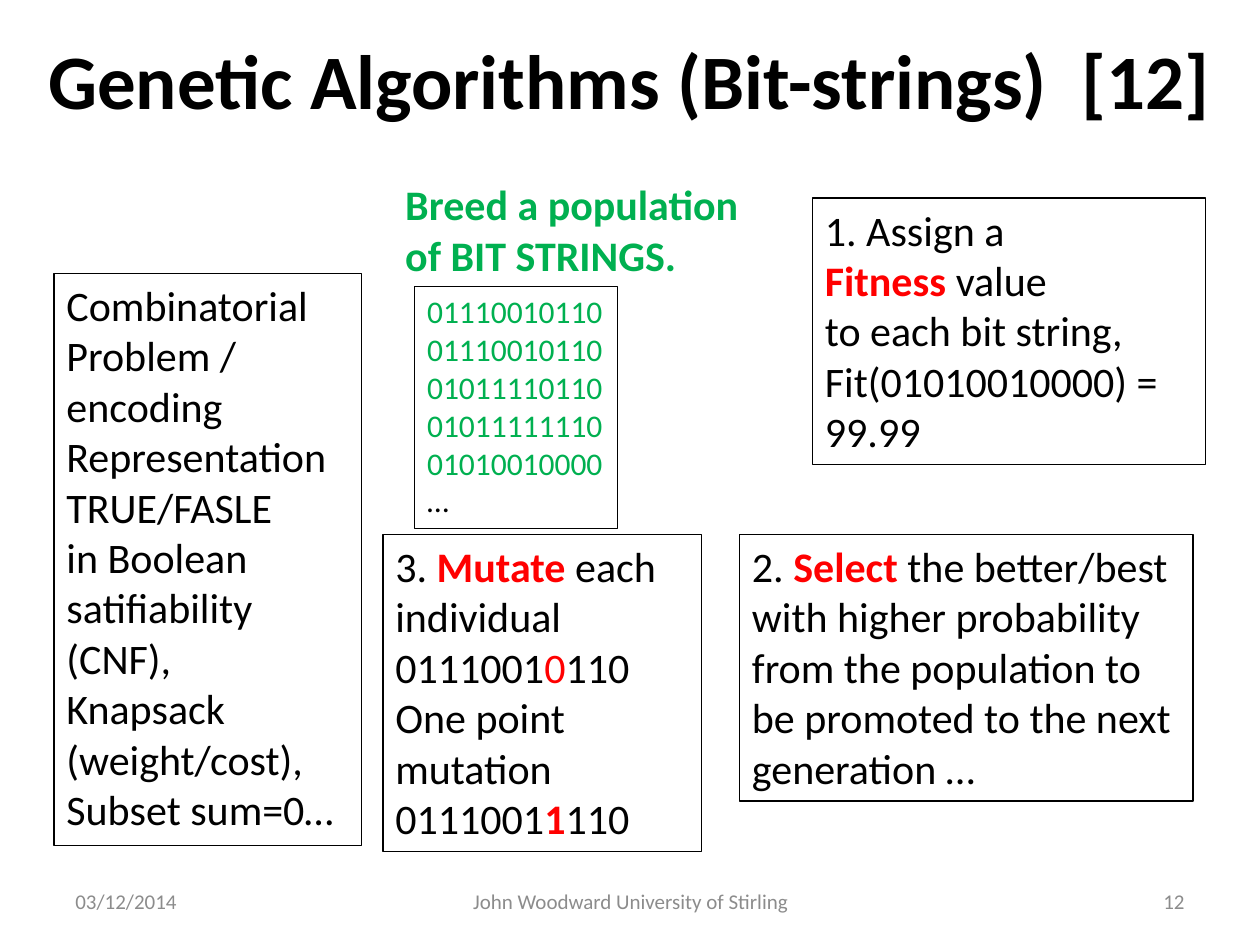
import pptx
import pptx.util
import pptx.dml.color
import pptx.enum.shapes
import pptx.enum.text

Cm, Pt = pptx.util.Cm, pptx.util.Pt
ALIGN = pptx.enum.text.PP_ALIGN
MID = pptx.enum.text.MSO_ANCHOR.MIDDLE
RECT = pptx.enum.shapes.MSO_SHAPE.RECTANGLE
HUE = {"black": "000000", "red": "FF0000", "green": "00B050", "grey": "8C8C8C"}


def rgb(name):
    return pptx.dml.color.RGBColor.from_string(HUE[name])


def fill_text(shape, paras, size, hue="black", bold=False, align=ALIGN.LEFT, wrap=True):
    """Write paragraphs; each is a string or a list of strings and (text, hue, bold) runs."""
    frame = shape.text_frame
    frame.word_wrap = wrap
    for i, para in enumerate(paras):
        line = frame.add_paragraph() if i else frame.paragraphs[0]
        line.alignment = align
        for part in [para] if isinstance(para, str) else para:
            text, tint, heavy = (part, hue, bold) if isinstance(part, str) else part
            run = line.add_run()
            run.text = text
            run.font.name = "Calibri"
            run.font.size = Pt(size)
            run.font.bold = heavy
            run.font.color.rgb = rgb(tint)


deck = pptx.Presentation()
deck.slide_width, deck.slide_height = Cm(25.4), Cm(19.05)
slide = deck.slides.add_slide(deck.slide_layouts[6])
shapes = slide.shapes

# Title and heading
title = shapes.add_textbox(Cm(0), Cm(0), Cm(25.4), Cm(3.18))
title.text_frame.vertical_anchor = MID
fill_text(title, ["Genetic Algorithms (Bit-strings)  [12]"], 44, bold=True, align=ALIGN.CENTER)

head = shapes.add_textbox(Cm(7.92), Cm(3.48), Cm(7.29), Cm(2.31))
fill_text(head, ["Breed a population", "of BIT STRINGS."], 24, "green", True, wrap=False)

# Framed boxes: left, top, width, height, size, wrap, paragraphs
bits = ["01110010110", "01110010110", "01011110110", "01011111110", "01010010000"]
boxes = [
    (8.36, 5.77, 4.09, 4.88, 18, False,
     [[(bit, "green", False)] for bit in bits] + ["…"]),
    (14.91, 10.77, 9.14, 5.38, 24, True, [
        ["2. ", ("Select ", "red", True),
         "the better/best with higher probability from the population "
         "to be promoted to the next generation …"]]),
    (7.72, 10.77, 6.43, 6.4, 24, True, [
        ["3. ", ("Mutate ", "red", True), "each individual"],
        ["0111001", ("0", "red", False), "110"],
        "One point mutation",
        ["0111001", ("1", "red", True), "110"]]),
    (16.38, 3.99, 7.92, 5.38, 24, True, [
        "1. Assign a",
        [("Fitness ", "red", True), "value"],
        "to each bit string, Fit(01010010000) =  99.99"]),
    (1.09, 5.51, 6.2, 11.53, 24, True, [
        "Combinatorial Problem / encoding",
        "Representation",
        "TRUE/FASLE",
        "in Boolean satifiability (CNF),",
        "Knapsack (weight/cost),",
        "Subset sum=0…"]),
]
for left, top, width, height, size, wrap, paras in boxes:
    box = shapes.add_shape(RECT, Cm(left), Cm(top), Cm(width), Cm(height))
    box.shadow.inherit = False
    box.fill.background()
    box.line.color.rgb = rgb("black")
    box.line.width = Pt(0.75)
    box.text_frame.vertical_anchor = pptx.enum.text.MSO_ANCHOR.TOP
    fill_text(box, paras, size, wrap=wrap)

# Footer
foot = [
    (1.27, 5.92, "03/12/2014", ALIGN.LEFT),
    (8.69, 8.05, "John Woodward University of Stirling", ALIGN.CENTER),
    (18.21, 5.92, "12", ALIGN.RIGHT),
]
for left, width, text, align in foot:
    note = shapes.add_textbox(Cm(left), Cm(17.65), Cm(width), Cm(1.02))
    note.text_frame.vertical_anchor = MID
    fill_text(note, [text], 12, "grey", align=align)

deck.save("out.pptx")
